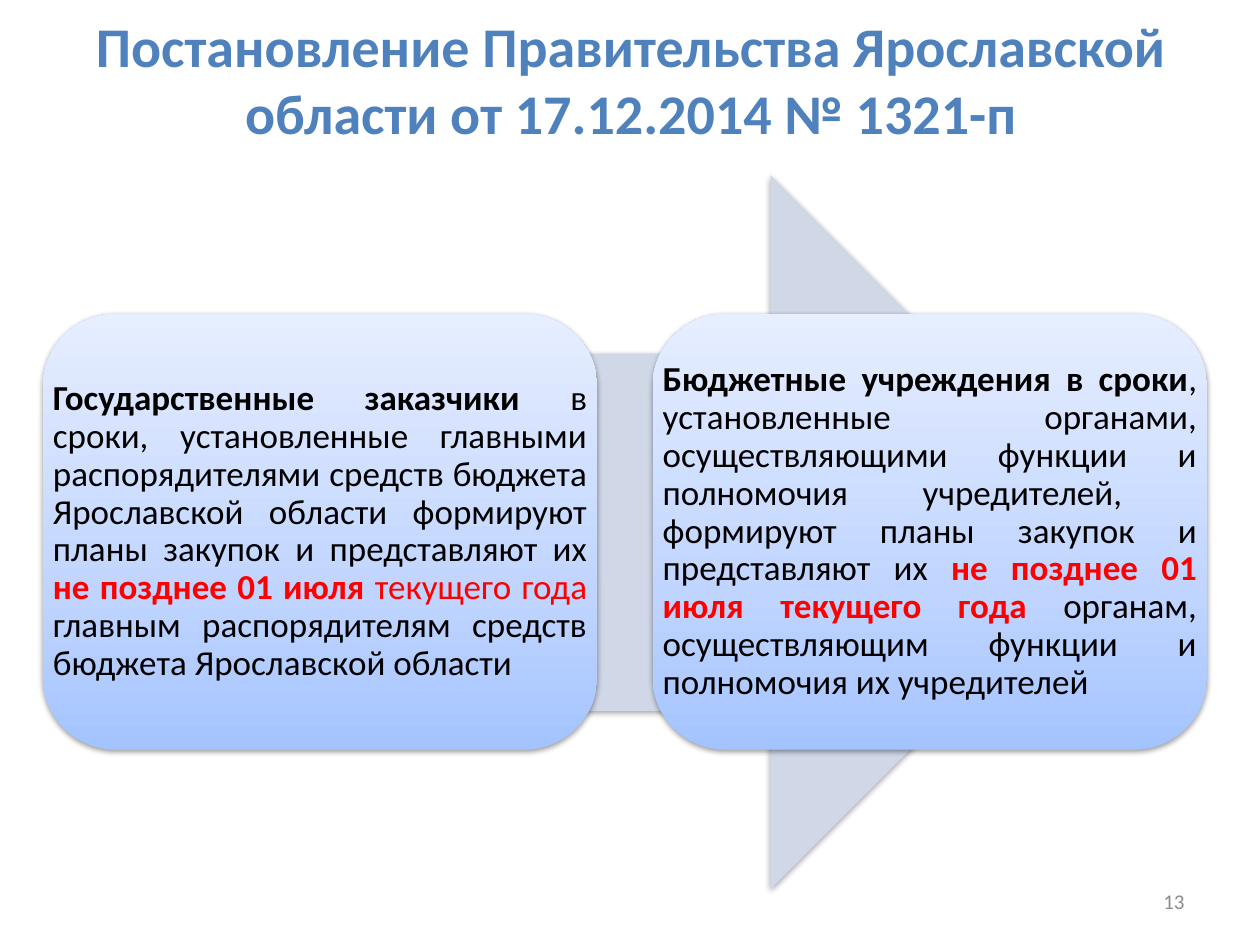
from dataclasses import dataclass

from lxml import etree
from pptx import Presentation
from pptx import util as u
from pptx.dml.color import RGBColor
from pptx.enum import shapes, text
from pptx.oxml import ns


@dataclass(frozen=True)
class Theme:
    font: str = "Calibri"
    title: str = "4F81BD"
    body: str = "000000"
    accent: str = "FF0000"
    muted: str = "8C8C8C"
    arrow: str = "D0D8E8"
    card_stops: tuple = ((0, "A4C4FF"), (35, "BFD4FF"), (100, "E6EEFF"))
    title_size: int = 32
    body_size: int = 20
    number_size: int = 12


THEME = Theme()

# Card wording: (text, bold, colour)
CARDS = (
    (
        ("Государственные заказчики ", True, THEME.body),
        ("в сроки, установленные главными распорядителями средств бюджета "
         "Ярославской области формируют планы закупок и представляют их ", False, THEME.body),
        ("не позднее 01 июля ", True, THEME.accent),
        ("текущего года ", False, THEME.accent),
        ("главным распорядителям средств бюджета Ярославской области", False, THEME.body),
    ),
    (
        ("Бюджетные учреждения в сроки", True, THEME.body),
        (", установленные органами, осуществляющими функции и полномочия учредителей,  "
         "формируют планы закупок и представляют их ", False, THEME.body),
        ("не позднее 01 июля текущего года ", True, THEME.accent),
        ("органам, осуществляющим функции и полномочия их учредителей", False, THEME.body),
    ),
)
CARD_LEFT, CARD_TOP, CARD_WIDTH, CARD_HEIGHT = 0.34, 2.49, 4.4, 3.46
CARD_GAP = 0.44
CARD_INSET = 0.08


def inches(*lengths):
    return [u.Inches(length) for length in lengths]


def style_font(font, size, color, bold=False):
    font.name = THEME.font
    font.size = u.Pt(size)
    font.bold = bold
    font.color.rgb = RGBColor.from_string(color)


def add_color(parent, color):
    return etree.SubElement(parent, ns.qn("a:srgbClr"), val=color)


def add_shadow(shape):
    shape.shadow.inherit = False
    effects = shape._element.spPr.find(ns.qn("a:effectLst"))
    shadow = etree.SubElement(
        effects, ns.qn("a:outerShdw"), blurRad=str(u.Pt(3.1)), dist=str(u.Pt(1.6)),
        dir="5400000", rotWithShape="0")
    etree.SubElement(add_color(shadow, "000000"), ns.qn("a:alpha"), val="38000")


def add_block(page, kind, bounds):
    block = page.shapes.add_shape(kind, *inches(*bounds))
    block.line.fill.background()
    add_shadow(block)
    return block


def fill_gradient(shape, stops):
    shape.fill.gradient()
    shape.fill.gradient_angle = 90
    stop_list = shape._element.spPr.find(".//" + ns.qn("a:gsLst"))
    for old_stop in list(stop_list):
        stop_list.remove(old_stop)
    for percent, color in stops:
        stop = etree.SubElement(stop_list, ns.qn("a:gs"), pos=str(percent * 1000))
        add_color(stop, color)


def add_text_box(page, bounds, align):
    box = page.shapes.add_textbox(*inches(*bounds))
    frame = box.text_frame
    frame.word_wrap = True
    frame.vertical_anchor = text.MSO_ANCHOR.MIDDLE
    para = frame.paragraphs[0]
    para.alignment = align
    return frame, para


def add_title(page, wording):
    title = page.shapes.title
    title.left, title.top, title.width, title.height = inches(0.51, 0, 9, 1.25)
    title.text_frame.text = wording
    title.text_frame.vertical_anchor = text.MSO_ANCHOR.MIDDLE
    para = title.text_frame.paragraphs[0]
    para.alignment = text.PP_ALIGN.CENTER
    style_font(para.font, THEME.title_size, THEME.title, bold=True)


def add_card(page, left, spans):
    bounds = (left, CARD_TOP, CARD_WIDTH, CARD_HEIGHT)
    card = add_block(page, shapes.MSO_SHAPE.ROUNDED_RECTANGLE, bounds)
    fill_gradient(card, THEME.card_stops)

    # The text spans the full card width, free of the rounded corners' inset
    frame, para = add_text_box(page, bounds, text.PP_ALIGN.JUSTIFY)
    frame.margin_left = frame.margin_right = u.Inches(CARD_INSET)
    frame.margin_top = frame.margin_bottom = u.Inches(CARD_INSET)
    para.line_spacing = 0.9
    for wording, bold, color in spans:
        span = para.add_run()
        span.text = wording
        style_font(span.font, THEME.body_size, color, bold)


def add_page_number(page, number):
    _, para = add_text_box(page, (7.17, 6.95, 2.33, 0.4), text.PP_ALIGN.RIGHT)
    para.text = number
    style_font(para.font, THEME.number_size, THEME.muted)


def main():
    deck = Presentation()
    deck.slide_width, deck.slide_height = inches(10, 7.5)
    page = deck.slides.add_slide(deck.slide_layouts[5])

    add_title(page, "Постановление Правительства Ярославской области от 17.12.2014 № 1321-п")

    # Arrow behind the cards
    arrow = add_block(page, shapes.MSO_SHAPE.RIGHT_ARROW, (0.98, 1.39, 7.97, 5.67))
    arrow.fill.solid()
    arrow.fill.fore_color.rgb = RGBColor.from_string(THEME.arrow)

    # Cards, left to right
    for index, spans in enumerate(CARDS):
        add_card(page, CARD_LEFT + index * (CARD_WIDTH + CARD_GAP), spans)

    add_page_number(page, "13")
    deck.save("out.pptx")


if __name__ == "__main__":
    main()
